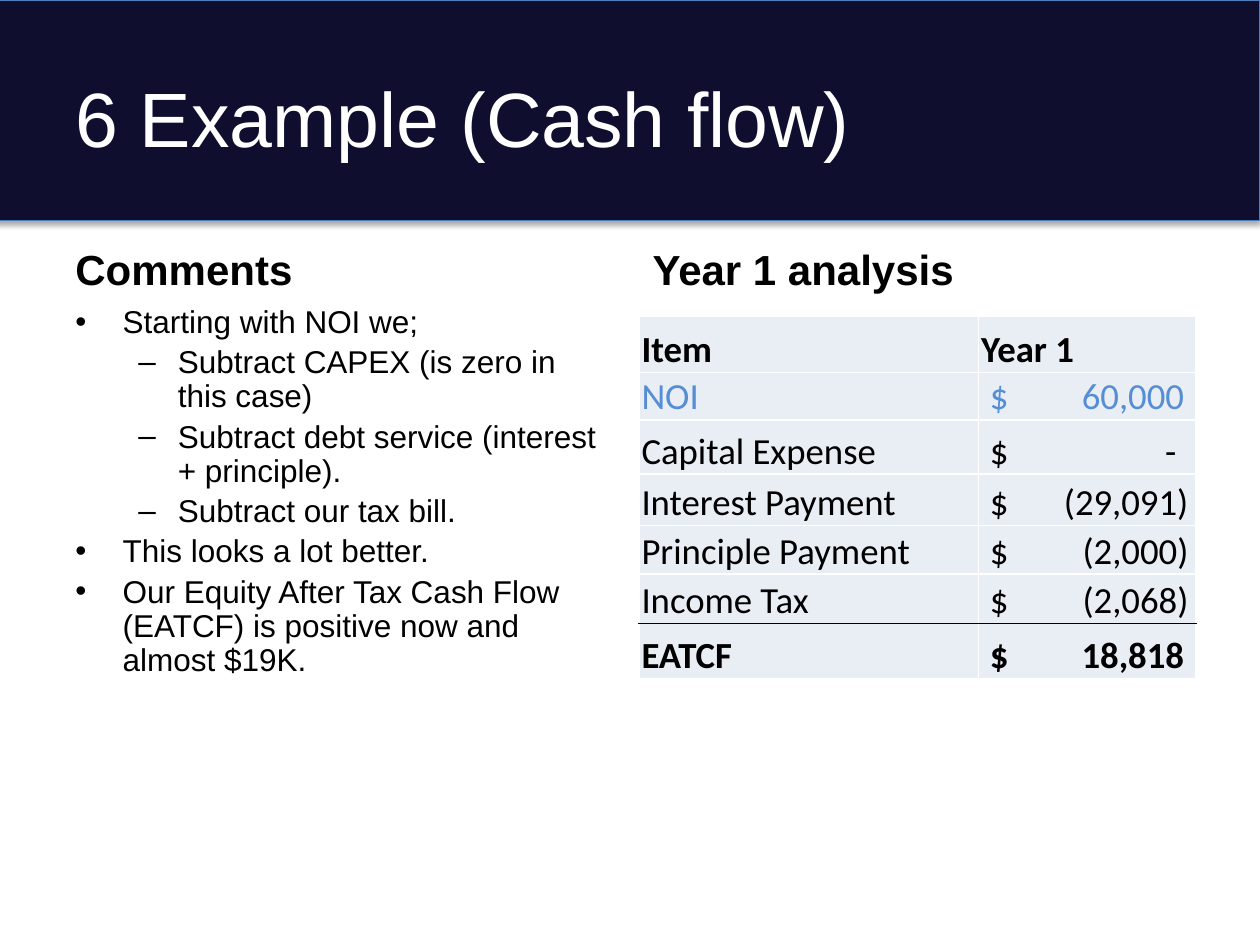
from lxml import etree
from pptx import Presentation
from pptx.dml.color import RGBColor
from pptx.enum.shapes import MSO_SHAPE
from pptx.enum.text import MSO_ANCHOR, MSO_AUTO_SIZE, PP_ALIGN
from pptx.oxml.ns import qn
from pptx.util import Pt

LEFT = PP_ALIGN.LEFT
TOP, MIDDLE, BOTTOM = MSO_ANCHOR.TOP, MSO_ANCHOR.MIDDLE, MSO_ANCHOR.BOTTOM
NO_FIT = MSO_AUTO_SIZE.NONE
RECTANGLE = MSO_SHAPE.RECTANGLE
TITLE_ONLY = 5

COLORS = {
    "navy": "100E2F",
    "band_edge": "4B7EBC",
    "black": "000000",
    "white": "FFFFFF",
    "cell": "E9EDF4",
    "noi": "558ED5",
}
COMMENTS = [
    (0, "Starting with NOI we;"),
    (1, "Subtract CAPEX (is zero in this case)"),
    (1, "Subtract debt service (interest + principle)."),
    (1, "Subtract our tax bill."),
    (0, "This looks a lot better."),
    (0, "Our Equity After Tax Cash Flow (EATCF) is positive now and almost $19K."),
]
BULLETS = [("•", 27, -27), ("–", 58.5, -22.5)]
CASH_FLOW = [
    ("Item", "Year 1", 31.9),
    ("NOI", "60,000", 27),
    ("Capital Expense", "-", 31.1),
    ("Interest Payment", "(29,091)", 29.2),
    ("Principle Payment", "(2,000)", 27.9),
    ("Income Tax", "(2,068)", 28.3),
    ("EATCF", "18,818", 31.5),
]
COLUMN_SHARES = (0.61, 0.39)


def rgb(name):
    """Return the named colour."""
    return RGBColor.from_string(COLORS[name])


def add_element(parent, tag, **attributes):
    """Append a DrawingML child with the given attributes."""
    values = {key: str(value) for key, value in attributes.items()}
    return etree.SubElement(parent, qn(tag), values)


def write(paragraph, text, size=18, font="Arial", color="black", bold=False,
          before=0, spacing=1.0):
    """Write one formatted run into a left-aligned paragraph."""
    paragraph.alignment = LEFT
    paragraph.space_before = Pt(before)
    paragraph.line_spacing = spacing
    run = paragraph.add_run()
    run.text = text
    run.font.size = Pt(size)
    run.font.name = font
    run.font.bold = bold
    run.font.color.rgb = rgb(color)


def set_bullet(paragraph, level):
    """Give a paragraph the bullet and hanging indent of its level."""
    mark, margin, indent = BULLETS[level]
    paragraph.level = level
    properties = paragraph._p.get_or_add_pPr()
    properties.set("marL", str(Pt(margin)))
    properties.set("indent", str(Pt(indent)))
    add_element(properties, "a:buFont", typeface="Arial")
    add_element(properties, "a:buChar", char=mark)


def add_text_frame(slide, box, anchor):
    """Add a wrapping text box and return its frame."""
    frame = slide.shapes.add_textbox(*map(Pt, box)).text_frame
    frame.word_wrap = True
    frame.vertical_anchor = anchor
    return frame


def add_header(slide, box):
    """Place the shadowed band and the title over it."""
    left, top, width, height = box
    band = slide.shapes.add_shape(RECTANGLE, *map(Pt, box))
    band.fill.solid()
    band.fill.fore_color.rgb = rgb("navy")
    band.line.color.rgb = rgb("band_edge")
    band.line.width = Pt(0.75)
    band.shadow.inherit = False
    effects = band.element.spPr.find(qn("a:effectLst"))
    shadow = add_element(effects, "a:outerShdw", blurRad=Pt(3.1), dist=Pt(1.8),
                         dir=5400000, rotWithShape=0)
    shade = add_element(shadow, "a:srgbClr", val=COLORS["black"])
    add_element(shade, "a:alpha", val=35000)

    title = slide.shapes.title
    title.element.addprevious(band.element)
    title.left, title.top = Pt(left + 39), Pt(top + 21.6)
    title.width, title.height = Pt(width - 75), Pt(height - 36)
    title.text_frame.vertical_anchor = MIDDLE
    title.text_frame.auto_size = NO_FIT
    write(title.text_frame.paragraphs[0], "6 Example (Cash flow)", size=44, color="white")


def add_heading(slide, box, text):
    """Place a bold column heading at the bottom of its box."""
    frame = add_text_frame(slide, box, BOTTOM)
    write(frame.paragraphs[0], text, size=24, bold=True, before=4.8)


def add_comments(slide, box):
    """Place the two-level list of comments."""
    frame = add_text_frame(slide, box, TOP)
    for index, (level, text) in enumerate(COMMENTS):
        paragraph = frame.add_paragraph() if index else frame.paragraphs[0]
        write(paragraph, text, before=3.6, spacing=0.9)
        set_bullet(paragraph, level)


def set_borders(cell, top, bottom):
    """Draw white sides and the given top and bottom rules."""
    properties = cell._tc.get_or_add_tcPr()
    sides = {"L": "white", "R": "white", "T": top, "B": bottom}
    for index, (side, color) in enumerate(sides.items()):
        line = add_element(properties, f"a:ln{side}", w=Pt(1))
        fill = add_element(line, "a:solidFill")
        add_element(fill, "a:srgbClr", val=COLORS[color])
        properties.insert(index, line)


def set_amount_tab(paragraph, amount):
    """Right-align the digits, letting a closing bracket overhang."""
    stop = {")": 113.5, "-": 106.5}.get(amount[-1], 111)
    tabs = add_element(paragraph._p.get_or_add_pPr(), "a:tabLst")
    add_element(tabs, "a:tab", pos=Pt(stop), algn="r")


def add_cash_flow(slide, box):
    """Place the cash flow table with a rule above its total."""
    total = len(CASH_FLOW) - 1
    table = slide.shapes.add_table(len(CASH_FLOW), 2, *map(Pt, box)).table
    table.first_row = table.horz_banding = False
    for column, share in zip(table.columns, COLUMN_SHARES):
        column.width = Pt(box[2] * share)
    for row, (item, amount, height) in enumerate(CASH_FLOW):
        table.rows[row].height = Pt(height)
        for column, text in enumerate((item, amount)):
            is_amount = row > 0 and column == 1
            cell = table.cell(row, column)
            cell.fill.solid()
            cell.fill.fore_color.rgb = rgb("cell")
            cell.vertical_anchor = BOTTOM
            cell.margin_left = Pt(6.4 if is_amount else 1.4)
            cell.margin_right = cell.margin_top = Pt(1.4)
            cell.margin_bottom = 0
            set_borders(cell, "black" if row == total else "white",
                        "black" if row == total - 1 else "white")
            paragraph = cell.text_frame.paragraphs[0]
            write(paragraph, f"$\t{text}" if is_amount else text, size=21,
                  font="Calibri", bold=row in (0, total),
                  color="noi" if item == "NOI" else "black")
            if is_amount:
                set_amount_tab(paragraph, text)


def main():
    """Build and save the slide."""
    deck = Presentation()
    deck.slide_width, deck.slide_height = Pt(720), Pt(540)
    slide = deck.slides.add_slide(deck.slide_layouts[TITLE_ONLY])
    add_header(slide, (-3, 0, 723, 126))
    add_heading(slide, (36, 121, 318.2, 50.4), "Comments")
    add_comments(slide, (36, 171.4, 318.2, 311))
    add_heading(slide, (365.8, 121, 318.2, 50.4), "Year 1 analysis")
    add_cash_flow(slide, (365.2, 181, 318.2, 207))
    deck.save("out.pptx")


if __name__ == "__main__":
    main()
